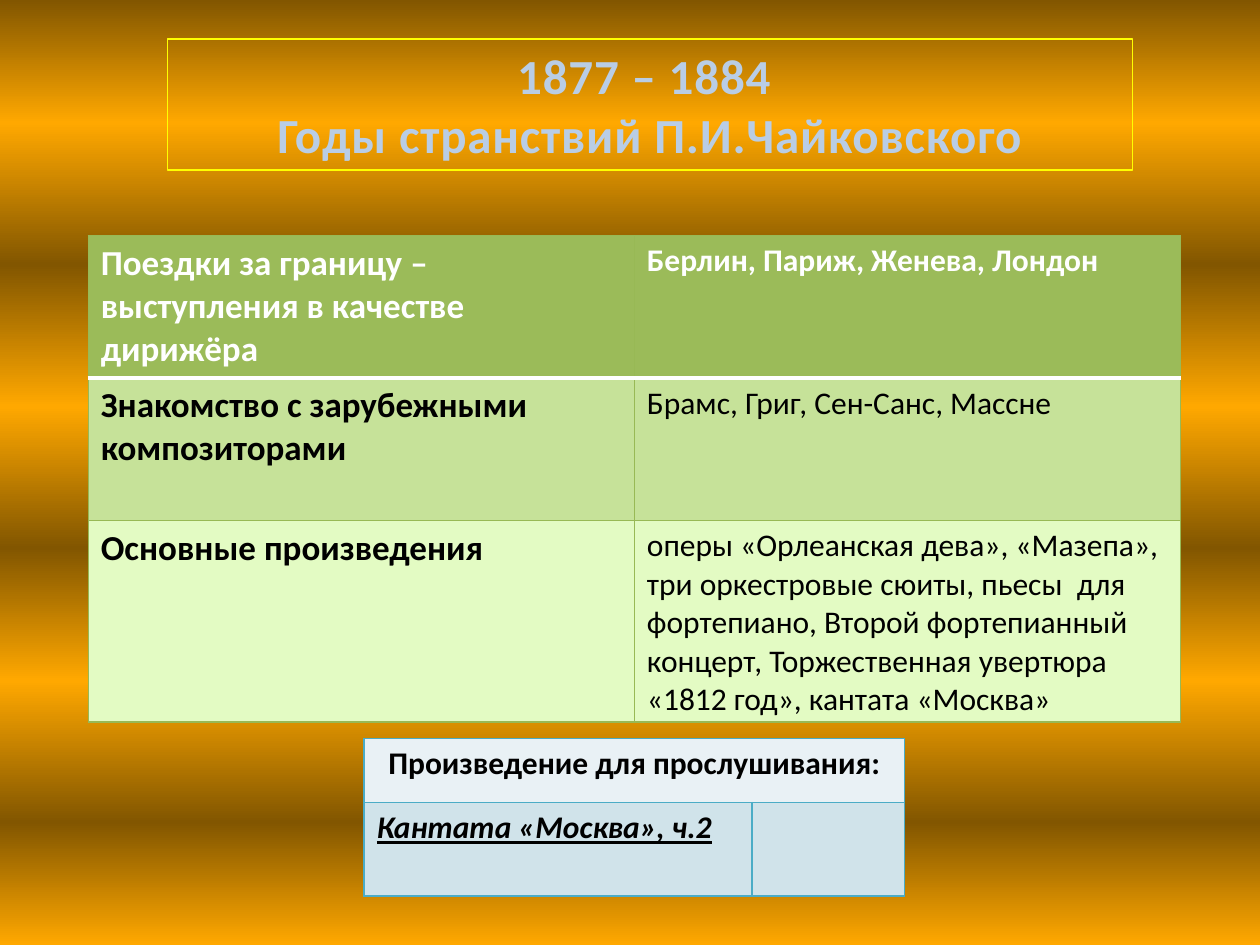
from dataclasses import dataclass

from lxml import etree
from pptx import Presentation
from pptx.dml.color import RGBColor
from pptx.enum.text import MSO_ANCHOR, MSO_AUTO_SIZE, PP_ALIGN
from pptx.oxml.ns import qn
from pptx.util import Inches, Pt

CENTER, LEFT = PP_ALIGN.CENTER, PP_ALIGN.LEFT
MIDDLE = MSO_ANCHOR.MIDDLE
FIT_SHAPE = MSO_AUTO_SIZE.SHAPE_TO_FIT_TEXT
TITLE_ONLY = 5


@dataclass(frozen=True)
class Theme:
    font: str = "Calibri"
    title_size: int = 28
    label_size: int = 20
    body_size: int = 18
    black: str = "000000"
    white: str = "FFFFFF"
    title: str = "B9CDE5"
    title_outline: str = "FFC000"
    title_frame: str = "FFFF00"
    dark_gold: str = "825600"
    gold: str = "FFA800"
    green_line: str = "98B955"
    green_rows: tuple = ("9BBB59", "C6E299", "E3FBC3")
    blue_line: str = "4BACC6"
    blue_rows: tuple = ("E9F1F5", "D0E3EA")


THEME = Theme()
GOLD_STOPS = (0, 13, 28, 43, 58, 72, 87, 100)
TITLE_LINES = ("1877 – 1884 ", "Годы странствий П.И.Чайковского")
TRAVEL_ROWS = (
    ("Поездки за границу – выступления в качестве дирижёра",
     "Берлин, Париж, Женева, Лондон"),
    ("Знакомство с зарубежными композиторами",
     "Брамс, Григ, Сен-Санс, Массне"),
    ("Основные произведения",
     "оперы «Орлеанская дева», «Мазепа», три оркестровые сюиты, пьесы  для "
     "фортепиано, Второй фортепианный концерт, Торжественная увертюра "
     "«1812 год», кантата «Москва»"),
)


def add_solid_fill(parent, color):
    fill = etree.SubElement(parent, qn("a:solidFill"))
    etree.SubElement(fill, qn("a:srgbClr"), val=color)


def style_run(run, size, color, bold=False):
    run.font.name = THEME.font
    run.font.size = Pt(size)
    run.font.bold = bold
    run.font.color.rgb = RGBColor.from_string(color)


def paint_background(slide):
    fill = slide.background.fill
    fill.gradient()
    fill.gradient_angle = 270
    stops = slide.element.find(".//" + qn("a:gsLst"))
    for old_stop in list(stops):
        stops.remove(old_stop)
    for index, percent in enumerate(GOLD_STOPS):
        stop = etree.SubElement(stops, qn("a:gs"), pos=str(percent * 1000))
        color = THEME.gold if index % 2 else THEME.dark_gold
        etree.SubElement(stop, qn("a:srgbClr"), val=color)


def outline_run(run, color, width):
    properties = run.font._element
    properties.set("spc", "50")
    outline = etree.Element(qn("a:ln"), w=str(Pt(width)))
    add_solid_fill(outline, color)
    properties.insert(0, outline)


def add_title(slide):
    title = slide.shapes.title
    title.left, title.top = Inches(1.33), Inches(0.31)
    title.width, title.height = Inches(7.66), Inches(1.04)
    title.line.color.rgb = RGBColor.from_string(THEME.title_frame)
    title.line.width = Pt(0.75)
    frame = title.text_frame
    frame.text = "\n".join(TITLE_LINES)
    frame.word_wrap = True
    frame.auto_size = FIT_SHAPE
    frame.vertical_anchor = MIDDLE
    for paragraph in frame.paragraphs:
        paragraph.alignment = CENTER
        paragraph.space_before = Pt(0)
        for run in paragraph.runs:
            style_run(run, THEME.title_size, THEME.title, bold=True)
            outline_run(run, THEME.title_outline, 0.9)


def add_plain_table(slide, left, top, col_widths, row_heights):
    table = slide.shapes.add_table(
        len(row_heights), len(col_widths), left, top,
        sum(col_widths), sum(row_heights)).table
    table.first_row = table.horz_banding = False
    for column, width in zip(table.columns, col_widths):
        column.width = width
    for row, height in zip(table.rows, row_heights):
        row.height = height
    return table


def set_borders(cell, color, width, **special):
    """Draw all four sides; special maps a side to its own (color, width)."""
    properties = cell._tc.get_or_add_tcPr()
    for index, side in enumerate("LRTB"):
        side_color, side_width = special.get(side, (color, width))
        border = etree.Element(qn("a:ln" + side), w=str(Pt(side_width)))
        add_solid_fill(border, side_color)
        properties.insert(index, border)


def fill_cell(cell, color):
    cell.fill.solid()
    cell.fill.fore_color.rgb = RGBColor.from_string(color)


def write_cell(cell, text, size, color, bold=False, align=LEFT):
    cell.text_frame.text = text
    paragraph = cell.text_frame.paragraphs[0]
    paragraph.alignment = align
    run = paragraph.runs[0]
    style_run(run, size, color, bold)
    return run


def add_travel_table(slide):
    table = add_plain_table(slide, Inches(0.7), Inches(1.87),
                            [Inches(8.67) // 2] * 2, [Inches(1.13)] * 3)
    header_rule = (THEME.white, 2)
    rules = ({"B": header_rule}, {"T": header_rule}, {})
    for row, texts in enumerate(TRAVEL_ROWS):
        is_header = row == 0
        color = THEME.white if is_header else THEME.black
        for col, text in enumerate(texts):
            is_label = col == 0
            cell = table.cell(row, col)
            size = THEME.label_size if is_label else THEME.body_size
            write_cell(cell, text, size, color, bold=is_label or is_header)
            fill_cell(cell, THEME.green_rows[row])
            set_borders(cell, THEME.green_line, 0.75, **rules[row])


def add_listening_table(slide):
    table = add_plain_table(slide, Inches(2.89), Inches(5.86),
                            [Inches(3.08), Inches(1.21)],
                            [Inches(0.51), Inches(0.74)])
    for row, color in enumerate(THEME.blue_rows):
        for col in range(2):
            cell = table.cell(row, col)
            fill_cell(cell, color)
            set_borders(cell, THEME.blue_line, 1)
    heading = table.cell(0, 0)
    heading.merge(table.cell(0, 1))
    write_cell(heading, "Произведение для прослушивания:",
               THEME.body_size, THEME.black, bold=True, align=CENTER)
    piece = write_cell(table.cell(1, 0), "Кантата «Москва», ч.2",
                       THEME.body_size, THEME.black, bold=True)
    piece.font.italic = piece.font.underline = True


def main():
    presentation = Presentation()
    presentation.slide_width, presentation.slide_height = Inches(10), Inches(7.5)
    slide = presentation.slides.add_slide(presentation.slide_layouts[TITLE_ONLY])
    paint_background(slide)
    add_title(slide)
    # Tables: the listening piece lies behind the travel years
    add_listening_table(slide)
    add_travel_table(slide)
    presentation.save("out.pptx")


if __name__ == "__main__":
    main()
